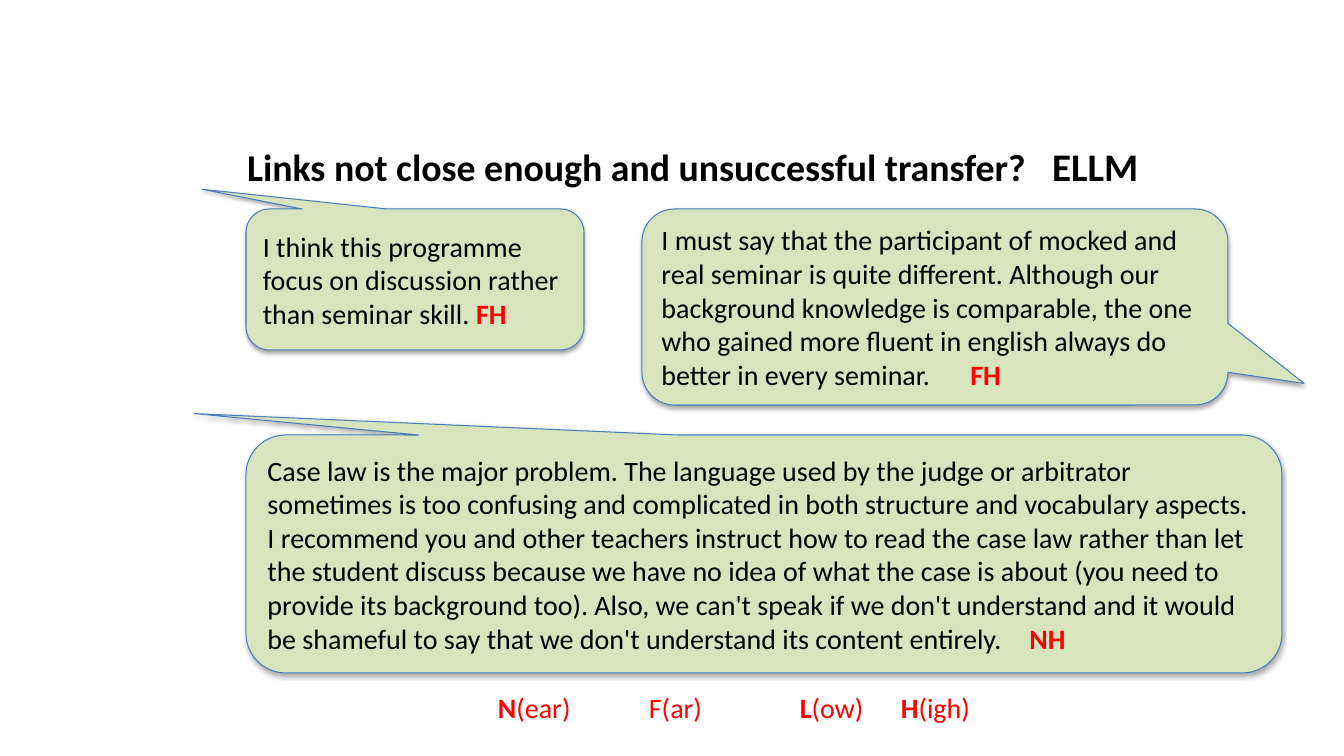
from lxml.etree import SubElement
from pptx import Presentation
from pptx.dml.color import RGBColor
from pptx.enum.shapes import MSO_SHAPE
from pptx.enum.text import MSO_ANCHOR, MSO_AUTO_SIZE, PP_ALIGN
from pptx.oxml.ns import qn
from pptx.util import Emu, Pt

# Content: runs are (text, colour, bold, size); boxes are left, top, width, height in px
COLORS = {"text": "000000", "code": "FF0000", "bubble": "D7E4BD",
          "outline": "4B7EBC", "shadow": "000000"}
FONT = "Calibri"
BODY = 20

HEADING = {
    "box": (237, 111, 934, 110),
    "tabs": [805],
    "runs": [("Links not close enough and unsuccessful transfer?\t", "text", True, 27),
             ("ELLM", "text", True, 27.9)],
}
QUOTES = [
    {"box": (246, 435, 1036, 238), "tail": (-0.55, -0.59), "tabs": [762], "code": "NH",
     "words": "Case law is the major problem. The language used by the judge or arbitrator "
              "sometimes is too confusing and complicated in both structure and vocabulary "
              "aspects. I recommend you and other teachers instruct how to read the case law "
              "rather than let the student discuss because we have no idea of what the case is "
              "about (you need to provide its background too). Also, we can't speak if we don't "
              "understand and it would be shameful to say that we don't understand its content "
              "entirely.\t"},
    {"box": (246, 209, 338, 141), "tail": (-0.63, -0.64), "tabs": [], "code": "FH",
     "words": "I think this programme focus on discussion rather than seminar skill. "},
    {"box": (642, 209, 586, 196), "tail": (0.63, 0.39), "tabs": [309], "code": "FH",
     "words": "I must say that the participant of mocked and real seminar is quite different. "
              "Although our background knowledge is comparable, the one who gained more fluent "
              "in english always do better in every seminar.\t"},
]
KEY = {
    "box": (488, 686, 506, 44),
    "tabs": [151, 302, 403],
    "runs": [("N", "code", True, BODY), ("(ear)\tF(ar)\t", "code", False, BODY),
             ("L", "code", True, BODY), ("(ow)\t", "code", False, BODY),
             ("H", "code", True, BODY), ("(igh)", "code", False, BODY)],
}


def px(length):
    return Emu(round(length * 12192000 / 1344))


def rgb(name):
    return RGBColor.from_string(COLORS[name])


def write(frame, runs, tabs=(), anchor=MSO_ANCHOR.MIDDLE):
    frame.word_wrap = True
    frame.auto_size = MSO_AUTO_SIZE.NONE
    frame.vertical_anchor = anchor
    line = frame.paragraphs[0]
    line.alignment = PP_ALIGN.LEFT
    if tabs:
        stops = SubElement(line._p.get_or_add_pPr(), qn("a:tabLst"))
        for stop in tabs:
            SubElement(stops, qn("a:tab"), pos=str(px(stop)), algn="l")
    for words, color, bold, size in runs:
        run = line.add_run()
        run.text = words
        run.font.name = FONT
        run.font.size = Pt(size)
        run.font.bold = bold
        run.font.color.rgb = rgb(color)


def add_soft_shadow(bubble):
    bubble.shadow.inherit = False
    effects = bubble._element.spPr.find(qn("a:effectLst"))
    shadow = SubElement(effects, qn("a:outerShdw"), blurRad="40000", dist="23000",
                        dir="5400000", rotWithShape="0")
    tint = SubElement(shadow, qn("a:srgbClr"), val=COLORS["shadow"])
    SubElement(tint, qn("a:alpha"), val="35000")


deck = Presentation()
deck.slide_width, deck.slide_height = px(1344), px(756)
slide = deck.slides.add_slide(deck.slide_layouts[5])

# Speech bubbles
for quote in QUOTES:
    bubble = slide.shapes.add_shape(MSO_SHAPE.ROUNDED_RECTANGULAR_CALLOUT,
                                    *map(px, quote["box"]))
    bubble.adjustments[0], bubble.adjustments[1] = quote["tail"]
    bubble.fill.solid()
    bubble.fill.fore_color.rgb = rgb("bubble")
    bubble.line.color.rgb = rgb("outline")
    bubble.line.width = Pt(0.75)
    add_soft_shadow(bubble)
    write(bubble.text_frame, [(quote["words"], "text", False, BODY),
                              (quote["code"], "code", True, BODY)], tabs=quote["tabs"])

# Heading
heading = slide.shapes.title
heading.left, heading.top, heading.width, heading.height = map(px, HEADING["box"])
write(heading.text_frame, HEADING["runs"], tabs=HEADING["tabs"])

# Key to the codes
key = slide.shapes.add_textbox(*map(px, KEY["box"]))
write(key.text_frame, KEY["runs"], tabs=KEY["tabs"], anchor=MSO_ANCHOR.TOP)

deck.save("out.pptx")
